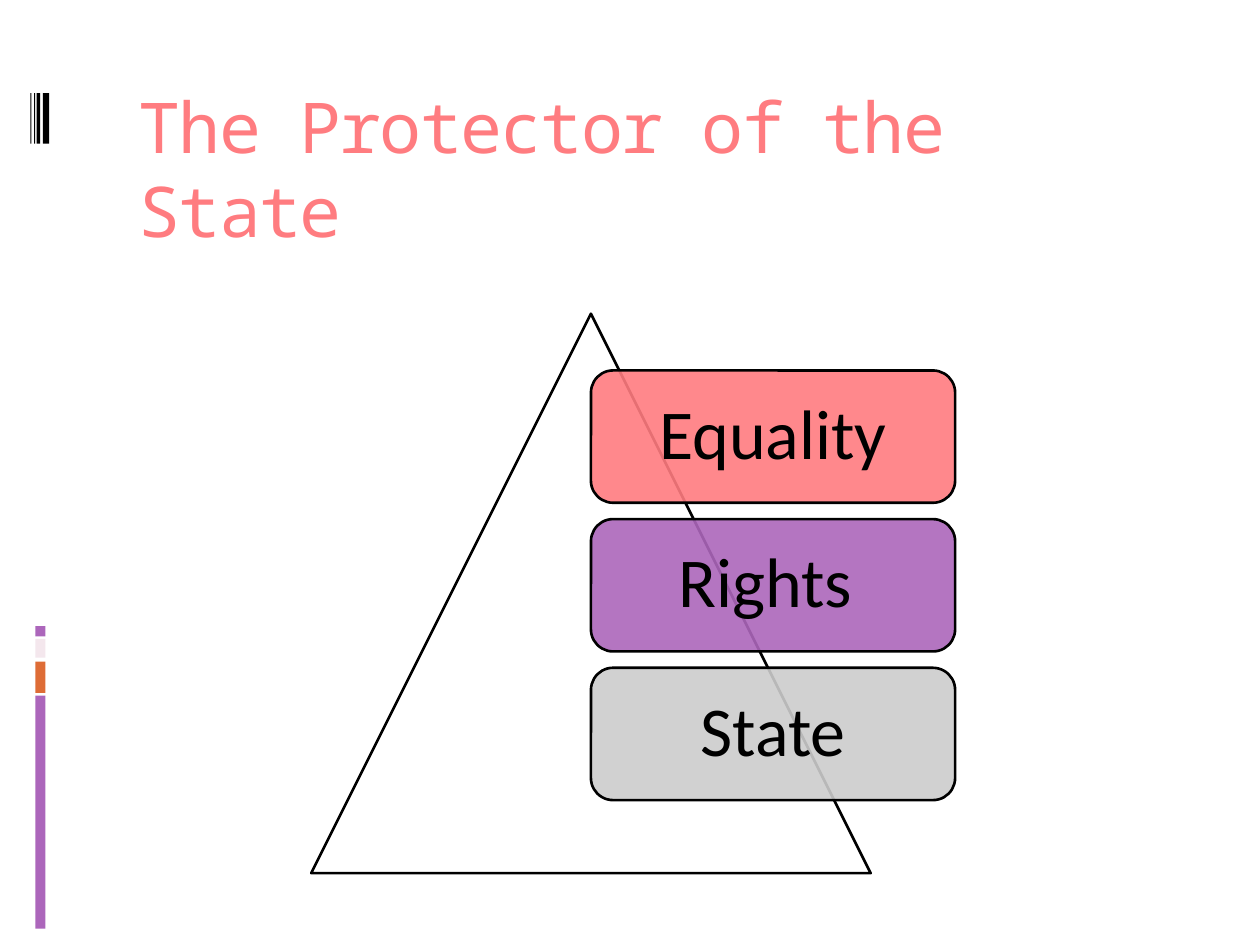
from pptx import Presentation
from pptx.dml.color import RGBColor
from pptx.enum.shapes import MSO_SHAPE
from pptx.enum.text import MSO_ANCHOR, PP_ALIGN
from pptx.oxml.ns import qn
from pptx.util import Inches, Pt
from lxml import etree

RECT, ROUND = MSO_SHAPE.RECTANGLE, MSO_SHAPE.ROUNDED_RECTANGLE
TRI = MSO_SHAPE.ISOSCELES_TRIANGLE
TOP, MIDDLE = MSO_ANCHOR.TOP, MSO_ANCHOR.MIDDLE
LEFT, CENTER = PP_ALIGN.LEFT, PP_ALIGN.CENTER

THEME = {
    "coral": "FF7C80", "purple": "AC66BB", "gray": "CCCCCC",
    "orange": "DE6C36", "blush": "F4E7ED", "black": "000000", "white": "FFFFFF",
    "size": Pt(40), "lead": Pt(48), "line": Pt(1.5),
    "head": "Noto Sans Mono", "body": "Calibri",
}


def color(name):
    return RGBColor.from_string(THEME[name])


def draw(kind, box, fill, line=None):
    """Add a filled shape, outlined only if a line color is named."""
    shape = slide.shapes.add_shape(kind, *map(Inches, box))
    shape.shadow.inherit = False
    shape.fill.solid()
    shape.fill.fore_color.rgb = color(fill)
    if line:
        shape.line.color.rgb = color(line)
        shape.line.width = THEME["line"]
    else:
        shape.line.fill.background()
    return shape


prs = Presentation()
prs.slide_width, prs.slide_height = Inches(10), Inches(7.5)
slide = prs.slides.add_slide(prs.slide_layouts[5])

# Side bars and top stripes
for top, height, fill in [(5.52, 1.85, "purple"), (5.25, 0.25, "orange"),
                          (5.07, 0.15, "blush"), (4.97, 0.08, "purple")]:
    draw(RECT, (0.28, top, 0.08, height), fill)
for left, width in [(0.34, 0.05), (0.29, 0.03), (0.27, 0.01), (0.24, 0.01)]:
    draw(RECT, (left, 0.74, width, 0.4), "black")

# Title
title = slide.shapes.title
for key, val in {"left": 1, "top": 0.56, "width": 8.5, "height": 1}.items():
    setattr(title, key, Inches(val))
frame = title.text_frame
frame.text = "The Protector of the State"
for key, val in {"vertical_anchor": TOP, "word_wrap": True,
                 "margin_top": Inches(0.1)}.items():
    setattr(frame, key, val)
para = frame.paragraphs[0]
para.alignment, para.line_spacing = LEFT, THEME["lead"]
run = para.runs[0]
run.font.name, run.font.size = THEME["head"], THEME["size"]
run.font.color.rgb = color("coral")
run.font._element.set("spc", "-100")

# Pyramid with three labels starting at its middle
side, left = 4.44, 2.47
draw(TRI, (left, 2.49, side, side), "white", "black")
inset = Inches(0.22)
labels = [("Equality", "coral"), ("Rights\t", "purple"), ("State", "gray")]
for i, (text, fill) in enumerate(labels):
    card = draw(ROUND, (left + side / 2, 2.94 + 1.18 * i, 2.89, 1.05), fill, "black")
    tint = card.fill._xPr.find(qn("a:solidFill"))[0]
    etree.SubElement(tint, qn("a:alpha")).set("val", "90000")
    frame = card.text_frame
    for key, val in {"vertical_anchor": MIDDLE, "word_wrap": True,
                     "margin_left": inset, "margin_right": inset,
                     "margin_top": inset, "margin_bottom": inset}.items():
        setattr(frame, key, val)
    para = frame.paragraphs[0]
    para.alignment, para.line_spacing = CENTER, 0.9
    run = para.add_run()
    run.text = text
    run.font.name, run.font.size = THEME["body"], THEME["size"]
    run.font.color.rgb = color("black")

prs.save("out.pptx")
